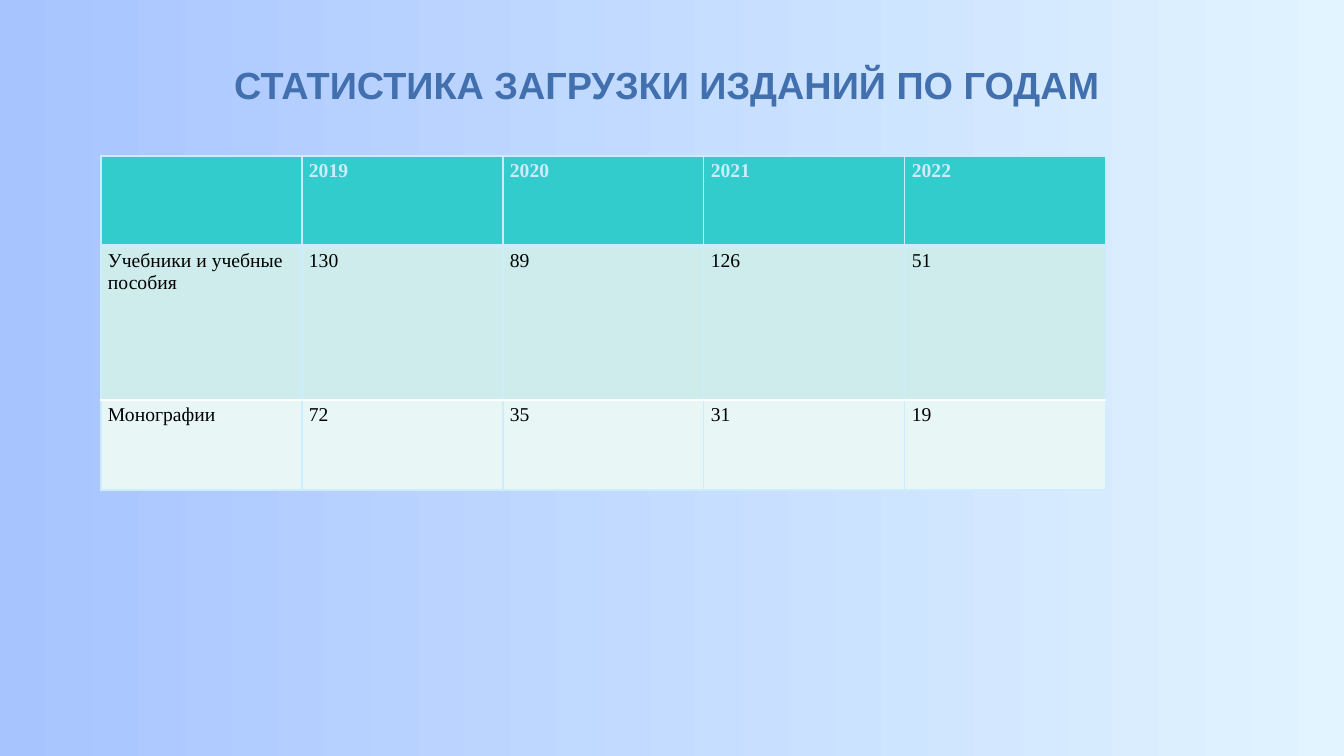
from lxml import etree
from pptx import Presentation
from pptx import util as u
from pptx.dml import color
from pptx.enum import text
from pptx.oxml import ns

PX = 914400 / 100.8


def px(length):
    return u.Emu(round(length * PX))


def rgb(value):
    return color.RGBColor.from_string(value)


class StatisticsSlide:
    """Holds the deck style and adds elements to the current slide."""

    title_font, table_font = "Arial", "Times New Roman"
    title_color, header_fill, line_color = "4270AE", "33CCCC", "CCECFF"
    body_color, band_fills = "000000", ("CEECEC", "E8F6F6")

    def __init__(self, deck):
        self.slide = deck.slides.add_slide(deck.slide_layouts[6])

    def background(self, *stops):
        fill = self.slide.background.fill
        fill.gradient()
        fill.gradient_angle = 0
        for stop, value in zip(fill.gradient_stops, stops):
            stop.color.rgb = rgb(value)

    def style(self, paragraph, font, size, value, bold):
        paragraph.font.name = font
        paragraph.font.size = u.Pt(size)
        paragraph.font.color.rgb = rgb(value)
        paragraph.font.bold = bold

    def title(self, wording, left, top, width, height):
        frame = self.slide.shapes.add_textbox(px(left), px(top), px(width), px(height)).text_frame
        frame.word_wrap = True
        frame.vertical_anchor = text.MSO_ANCHOR.MIDDLE
        heading = frame.paragraphs[0]
        heading.text = wording
        heading.alignment = text.PP_ALIGN.CENTER
        self.style(heading, self.title_font, 27, self.title_color, True)

    def borders(self, cell, widths):
        properties = cell._tc.get_or_add_tcPr()
        for position, (side, width) in enumerate(widths.items()):
            line = etree.Element(ns.qn(f"a:ln{side}"), w=str(u.Pt(width)))
            solid = etree.SubElement(line, ns.qn("a:solidFill"))
            etree.SubElement(solid, ns.qn("a:srgbClr"), val=self.line_color)
            properties.insert(position, line)

    def cell(self, cell, wording, row):
        header = row == 0
        cell.text = wording
        cell.margin_left = cell.margin_right = px(7)
        cell.margin_top = cell.margin_bottom = px(4)
        cell.fill.solid()
        cell.fill.fore_color.rgb = rgb(self.header_fill if header else self.band_fills[(row - 1) % 2])
        self.style(cell.text_frame.paragraphs[0], self.table_font, 14,
                   self.line_color if header else self.body_color, header)
        top = {"T": 1} if header else {}
        self.borders(cell, {"L": 1, "R": 1, **top, "B": 3 if header else 1})

    def table(self, records, left, top, column_width, row_heights):
        columns = len(records[0])
        table = self.slide.shapes.add_table(
            len(records), columns, px(left), px(top),
            px(columns * column_width), px(sum(row_heights))).table
        table.first_row = table.horz_banding = False
        for column in table.columns:
            column.width = px(column_width)
        for row, (record, height) in enumerate(zip(records, row_heights)):
            table.rows[row].height = px(height)
            for column, wording in enumerate(record):
                self.cell(table.cell(row, column), wording, row)


def main():
    deck = Presentation()
    deck.slide_width, deck.slide_height = px(1344), px(756)
    statistics = StatisticsSlide(deck)
    statistics.background("A7C4FF", "E1F4FF")
    statistics.title("СТАТИСТИКА ЗАГРУЗКИ ИЗДАНИЙ ПО ГОДАМ ", 101, 21, 1142, 126)
    downloads = [
        ("", "2019", "2020", "2021", "2022"),
        ("Учебники и учебные пособия", "130", "89", "126", "51"),
        ("Монографии", "72", "35", "31", "19"),
    ]
    statistics.table(downloads, 101, 156, 201, (90, 154, 90))
    deck.save("out.pptx")


if __name__ == "__main__":
    main()
